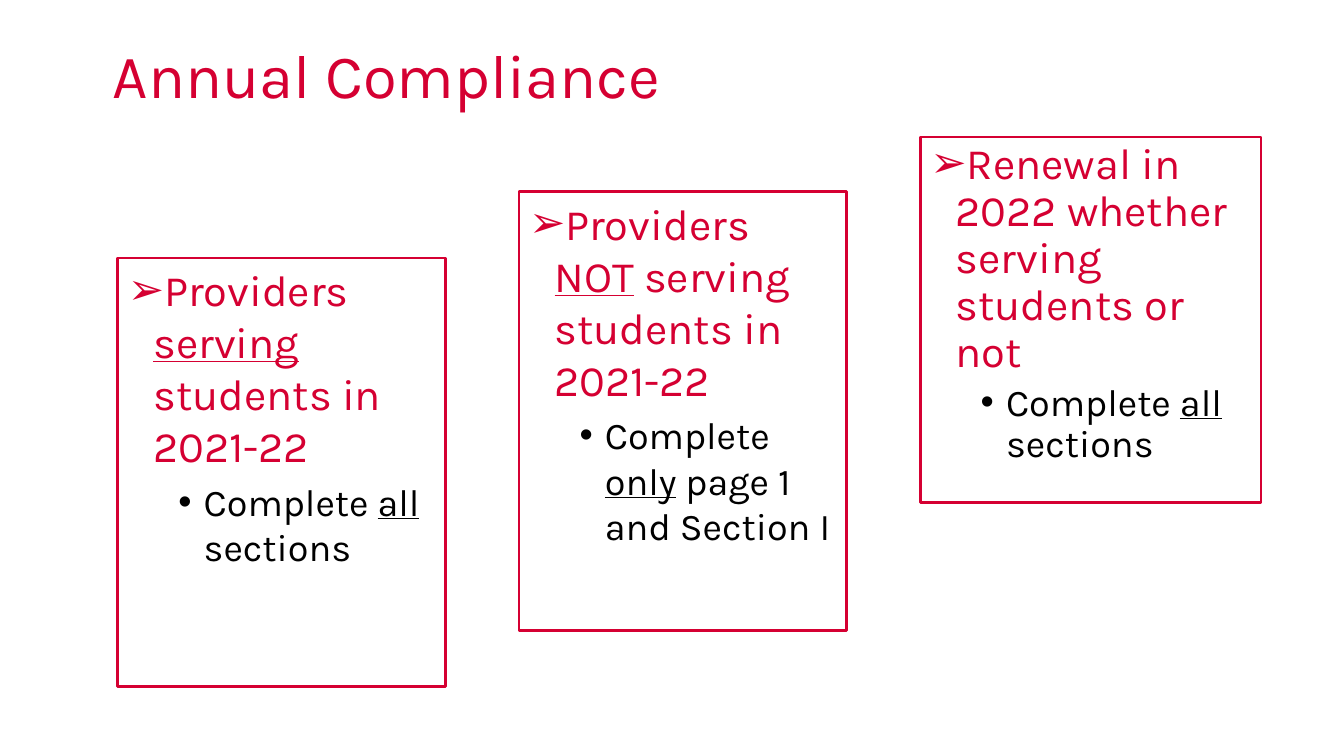
from dataclasses import dataclass

from lxml import etree
from pptx import Presentation, util as u
from pptx.dml.color import RGBColor
from pptx.enum import text
from pptx.oxml.ns import qn


@dataclass(frozen=True)
class Theme:
    face: str = "Karla"
    red: RGBColor = RGBColor(0xD5, 0x00, 0x32)
    black: RGBColor = RGBColor(0, 0, 0)
    title: int = 44
    head: int = 31
    item: int = 27
    edge: int = 2


class Deck:
    def __init__(self, theme):
        self.theme = theme
        self.prs = Presentation()
        self.prs.slide_width = u.Cm(33.87)
        self.prs.slide_height = u.Cm(19.05)
        self.slide = self.prs.slides.add_slide(self.prs.slide_layouts[4])

    def place(self, shape, area, anchor):
        shape.left, shape.top, shape.width, shape.height = map(u.Cm, area)
        frame = shape.text_frame
        frame.word_wrap = True
        frame.auto_size = text.MSO_AUTO_SIZE.NONE
        frame.vertical_anchor = anchor
        return frame

    def style(self, para, size, color):
        para.alignment = text.PP_ALIGN.LEFT
        font = para.font
        font.name = self.theme.face
        font.size = u.Pt(size)
        font.bold = False
        font.color.rgb = color

    def title(self, words, area):
        frame = self.place(self.slide.shapes.title, area, text.MSO_ANCHOR.MIDDLE)
        frame.text = words
        para = frame.paragraphs[0]
        para.line_spacing = 0.9
        self.style(para, self.theme.title, self.theme.red)

    def bullet(self, para, mark, indent):
        props = para._p.get_or_add_pPr()
        props.set("marL", str(u.Cm(indent)))
        props.set("indent", str(-u.Cm(0.64)))
        etree.SubElement(props, qn("a:buFont")).set("typeface", "Arial")
        etree.SubElement(props, qn("a:buChar")).set("char", mark)

    def runs(self, para, words):
        for i, part in enumerate(words.split("_")):
            if part:
                run = para.add_run()
                run.text = part
                if i % 2:
                    run.font.underline = True

    def card(self, idx, area, head, item, pitch):
        box = self.slide.placeholders[idx]
        frame = self.place(box, area, text.MSO_ANCHOR.TOP)
        box.line.color.rgb = self.theme.red
        box.line.width = u.Pt(self.theme.edge)
        rows = (
            (head, 0, "➢", 0.64, 0, self.theme.head, self.theme.red),
            (item, 1, "•", 1.91, 5, self.theme.item, self.theme.black),
        )
        for words, level, mark, indent, gap, size, color in rows:
            para = frame.add_paragraph() if level else frame.paragraphs[0]
            para.level = level
            self.bullet(para, mark, indent)
            para.space_before = u.Pt(gap)
            para.line_spacing = pitch
            self.style(para, size, color)
            self.runs(para, words)

    def drop(self, idx):
        node = self.slide.placeholders[idx]._element
        node.getparent().remove(node)

    def save(self):
        self.prs.save("out.pptx")


def main():
    deck = Deck(Theme())
    deck.title("Annual Compliance", (2.59, 0.74, 28.65, 2.46))
    cards = (
        ((2.97, 6.5, 8.26, 10.8), "Providers _serving_ students in 2021-22",
         "Complete _all_ sections", 1.0),
        ((13.08, 4.83, 8.26, 11.05), "Providers _NOT_ serving students in 2021-22",
         "Complete _only_ page 1 and Section I", 1.0),
        ((23.19, 3.45, 8.59, 9.22), "Renewal in 2022 whether serving students or not",
         "Complete _all_ sections", 0.9),
    )
    for idx, card in enumerate(cards, 1):
        deck.card(idx, *card)
    deck.drop(4)
    deck.save()


if __name__ == "__main__":
    main()
